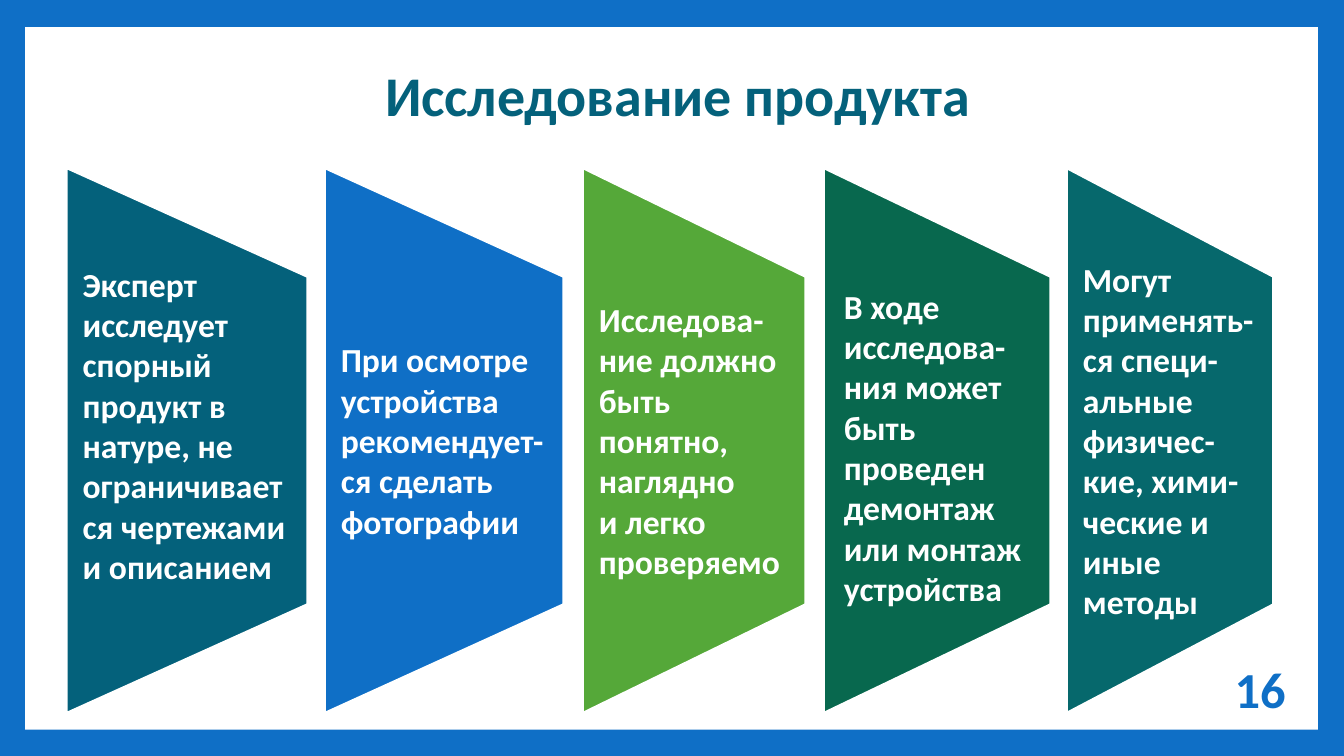
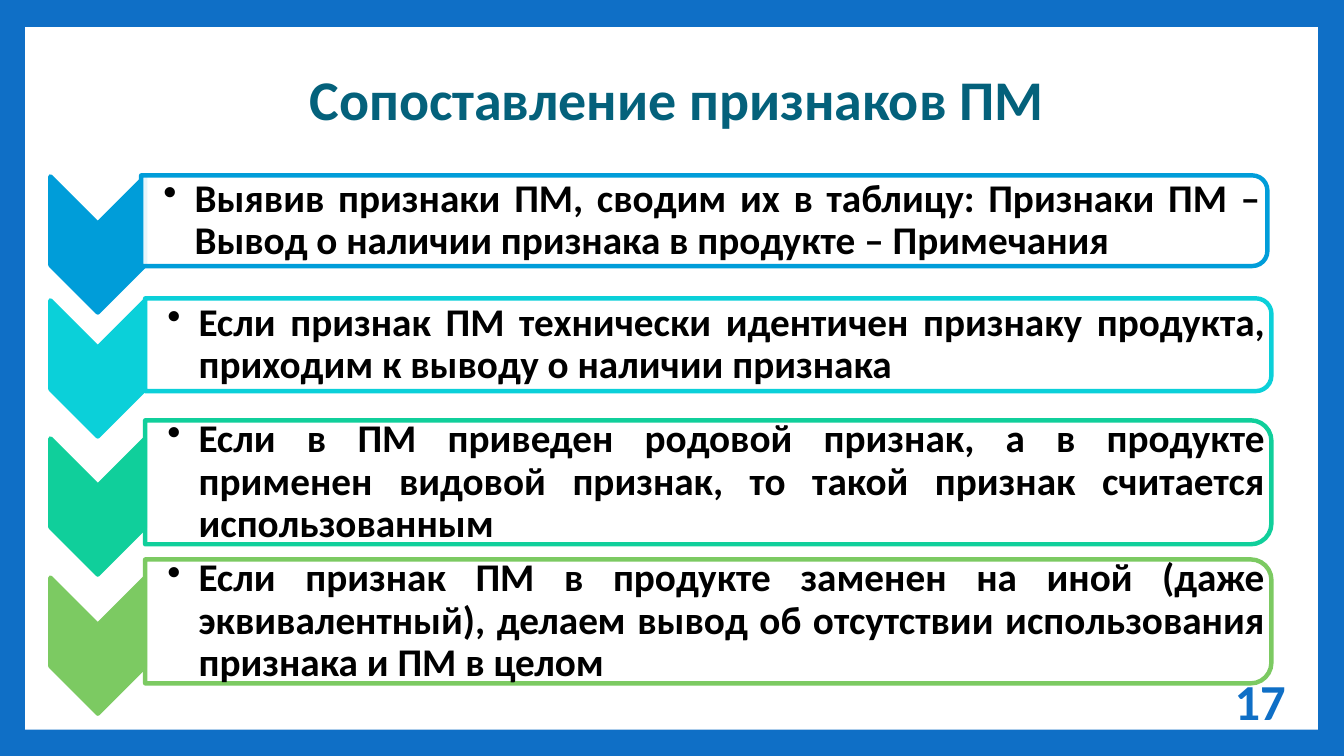
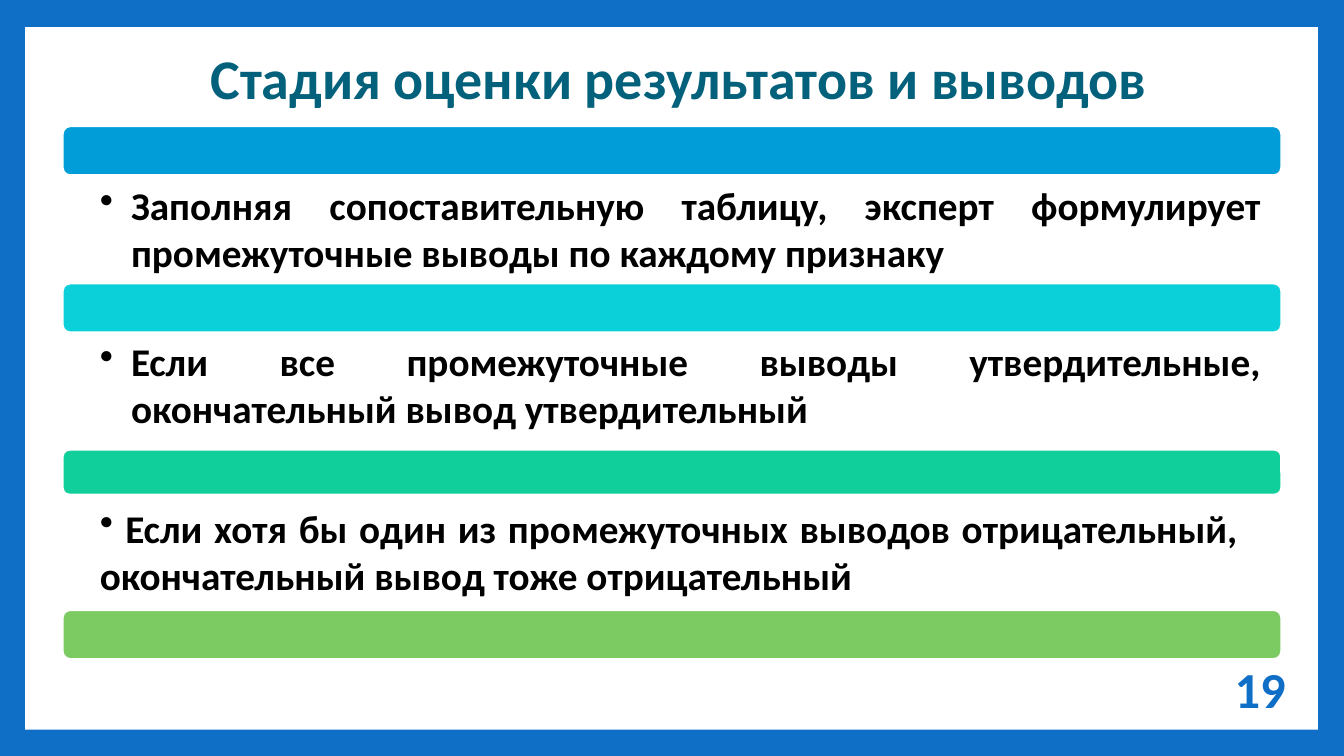
import pptx
import pptx.util
import pptx.dml.color
import pptx.enum.shapes
import pptx.enum.text
import pptx.oxml
import pptx.oxml.ns

RGB = pptx.dml.color.RGBColor
MSO = pptx.enum.shapes.MSO_SHAPE
ALIGN = pptx.enum.text.PP_ALIGN
ANCHOR = pptx.enum.text.MSO_ANCHOR
qn = pptx.oxml.ns.qn

WHITE = RGB(0xFF, 0xFF, 0xFF)
BLACK = RGB(0x00, 0x00, 0x00)
BLUE = RGB(0x0F, 0x6F, 0xC6)
PETROL = RGB(0x04, 0x61, 0x7B)
LEAF = RGB(0x55, 0xA8, 0x39)
FOREST = RGB(0x08, 0x68, 0x4E)
TEAL = RGB(0x06, 0x68, 0x6C)
STEPS = [RGB(0x00, 0x9D, 0xD9), RGB(0x0B, 0xD0, 0xD9),
         RGB(0x10, 0xCF, 0x9B), RGB(0x7C, 0xCA, 0x62)]

FONT = "Calibri"
PX = 9144  # 100 px to the inch


def px(*lengths):
    return [round(n * PX) for n in lengths]


def write(tf, text, size=24, color=BLACK, align=ALIGN.LEFT, anchor=ANCHOR.MIDDLE,
          spacing=1.0, insets=(10, 5, 10, 5), hang=None):
    """Fill a frame, one paragraph a line; hang is the bullet indent in px."""
    tf.word_wrap = True
    tf.auto_size = pptx.enum.text.MSO_AUTO_SIZE.NONE
    tf.vertical_anchor = anchor
    tf.margin_left, tf.margin_top, tf.margin_right, tf.margin_bottom = px(*insets)
    for i, line in enumerate(text.split("\n")):
        p = tf.add_paragraph() if i else tf.paragraphs[0]
        p.alignment = align
        p.line_spacing = spacing
        r = p.add_run()
        r.text = line
        r.font.name = FONT
        r.font.size = pptx.util.Pt(size)
        r.font.bold = True
        r.font.color.rgb = color
        if hang is not None:
            pPr = p._p.get_or_add_pPr()
            pPr.set("marL", str(hang * PX))
            pPr.set("indent", str(-hang * PX))
            bullet = pptx.oxml.parse_xml(
                '<a:buChar xmlns:a="%s" char="•"/>' % pptx.oxml.ns.namespaces("a")["a"])
            pPr.append(bullet)


class Deck:
    def __init__(self):
        self.prs = pptx.Presentation()
        self.prs.slide_width, self.prs.slide_height = px(1333, 750)
        fill = self.prs.slide_master.background.fill
        fill.solid()
        fill.fore_color.rgb = BLUE
        self.s = None

    def slide(self, title, x, y):
        self.s = self.prs.slides.add_slide(self.prs.slide_layouts[5])
        if len(self.prs.slides) == 1:
            self.sheet()
        sp = self.s.shapes.title
        sp.left, sp.top, sp.width, sp.height = px(x, y, 1094, 76)
        write(sp.text_frame, title, size=40, color=PETROL, align=ALIGN.CENTER, spacing=0.9)

    def sheet(self):
        """Put the white sheet on the master, behind every slide."""
        sp = self.shape(MSO.RECTANGLE, 25, 27, 1282, 697, WHITE)
        sp.element.nvSpPr.cNvPr.set("id", "99")
        self.prs.slide_master.shapes.element.insert(2, sp.element)

    def shape(self, kind, x, y, w, h, color, line=None, turn=0, alpha=None):
        """Add a shape by its visible box, also when it is turned by 90 or 270."""
        box = (x + (w - h) / 2, y + (h - w) / 2, h, w) if turn else (x, y, w, h)
        sp = self.s.shapes.add_shape(kind, *px(*box))
        sp.rotation = turn
        sp.shadow.inherit = False
        sp.fill.solid()
        sp.fill.fore_color.rgb = color
        if alpha:
            clr = sp.element.spPr.find(qn("a:solidFill")).find(qn("a:srgbClr"))
            clr.append(pptx.oxml.parse_xml('<a:alpha xmlns:a="%s" val="%d"/>' % (
                pptx.oxml.ns.namespaces("a")["a"], alpha * 1000)))
        if line is None:
            sp.line.fill.background()
        else:
            sp.line.color.rgb = line
            sp.line.width = pptx.util.Pt(3.15)
        return sp

    def text(self, text, x, y, w, h, **fmt):
        write(self.s.shapes.add_textbox(*px(x, y, w, h)).text_frame, text, **fmt)

    def bullet(self, text, x, y, w, h, **fmt):
        self.text(text, x, y, w, h, **{"size": 28, "align": ALIGN.JUSTIFY, "hang": 31, **fmt})

    def number(self, n, y=663, h=40):
        self.text(str(n), 1098, y, 187, h, size=36, color=BLUE, align=ALIGN.RIGHT)


def product_study(d):
    d.slide("Исследование продукта", 125, 60)
    # panel left, panel width, colour, text left, text width, text shift down, text
    panels = [
        (65, 241, PETROL, 65, 241, -15,
         "Эксперт исследует спорный продукт в натуре, не ограничивается чертежами и описанием"),
        (321, 239, BLUE, 321, 239, 0,
         "При осмотре устройства рекомендует-ся сделать фотографии"),
        (577, 223, LEAF, 577, 223, 0,
         "Исследова-ние должно быть понятно, наглядно\nи легко проверяемо"),
        (816, 227, FOREST, 820, 218, 7,
         "В ходе исследова-ния может быть проведен демонтаж или монтаж устройства"),
        (1057, 207, TEAL, 1057, 207, 0,
         "Могут применять-ся специ-альные физичес-кие, хими-ческие и иные методы"),
    ]
    for x, w, color, text_x, text_w, shift, text in panels:
        d.shape(MSO.FLOWCHART_MANUAL_OPERATION, x, 165, w, 544, color, line=WHITE, turn=270)
        d.text(text, text_x, 273 + shift, text_w, 327, color=WHITE, insets=(17, 0, 17, 0))
    d.number(16)


def feature_comparison(d):
    d.slide("Сопоставление признаков ПМ", 124, 64)
    # chevron top, box left, box top, box height, text
    rows = [
        (175, 140, 174, 90, "Выявив признаки ПМ, сводим их в таблицу: Признаки ПМ – "
                            "Вывод о наличии признака в продукте – Примечания"),
        (298, 144, 296, 92, "Если признак ПМ технически идентичен признаку продукта, "
                            "приходим к выводу о наличии признака"),
        (435, 144, 417, 123, "Если в ПМ приведен родовой признак, а в продукте применен "
                             "видовой признак, то такой признак считается использованным"),
        (573, 144, 555, 123, "Если признак ПМ в продукте заменен на иной (даже эквивалентный), "
                             "делаем вывод об отсутствии использования признака и ПМ в целом"),
    ]
    for color, (top, x, y, h, text) in zip(STEPS, rows):
        d.shape(MSO.CHEVRON, 50, top, 94, 135, color, line=color, turn=90)
        d.shape(MSO.ROUND_2_SAME_RECTANGLE, x, y, 1117, h, WHITE, line=color, turn=90, alpha=90)
        d.bullet(text, x, y + 5, 1112, h - 10, spacing=0.9, insets=(22, 2, 2, 2))
    d.number(17, y=671, h=47)


def conclusions(d):
    d.slide("Стадия оценки результатов и выводов", 126, 43)
    for color, y, h in zip(STEPS, (124, 280, 445, 604), (51, 51, 47, 51)):
        d.shape(MSO.ROUNDED_RECTANGLE, 61, y, 1211, h, color, line=WHITE)
    # top, width, bullet indent, text
    findings = [
        (176, 1211, 31, "Заполняя сопоставительную таблицу, эксперт формулирует "
                        "промежуточные выводы по каждому признаку"),
        (331, 1211, 31, "Если все промежуточные выводы утвердительные, "
                        "окончательный вывод утвердительный"),
        (496, 1188, 0, " Если хотя бы один из промежуточных выводов отрицательный, "
                       "окончательный вывод тоже отрицательный"),
    ]
    for y, w, hang, text in findings:
        d.bullet(text, 61, y, w, 105, hang=hang, anchor=ANCHOR.TOP, insets=(38, 4, 22, 4))
    d.number(19)


def main():
    d = Deck()
    product_study(d)
    feature_comparison(d)
    conclusions(d)
    d.prs.save("out.pptx")


if __name__ == "__main__":
    main()
